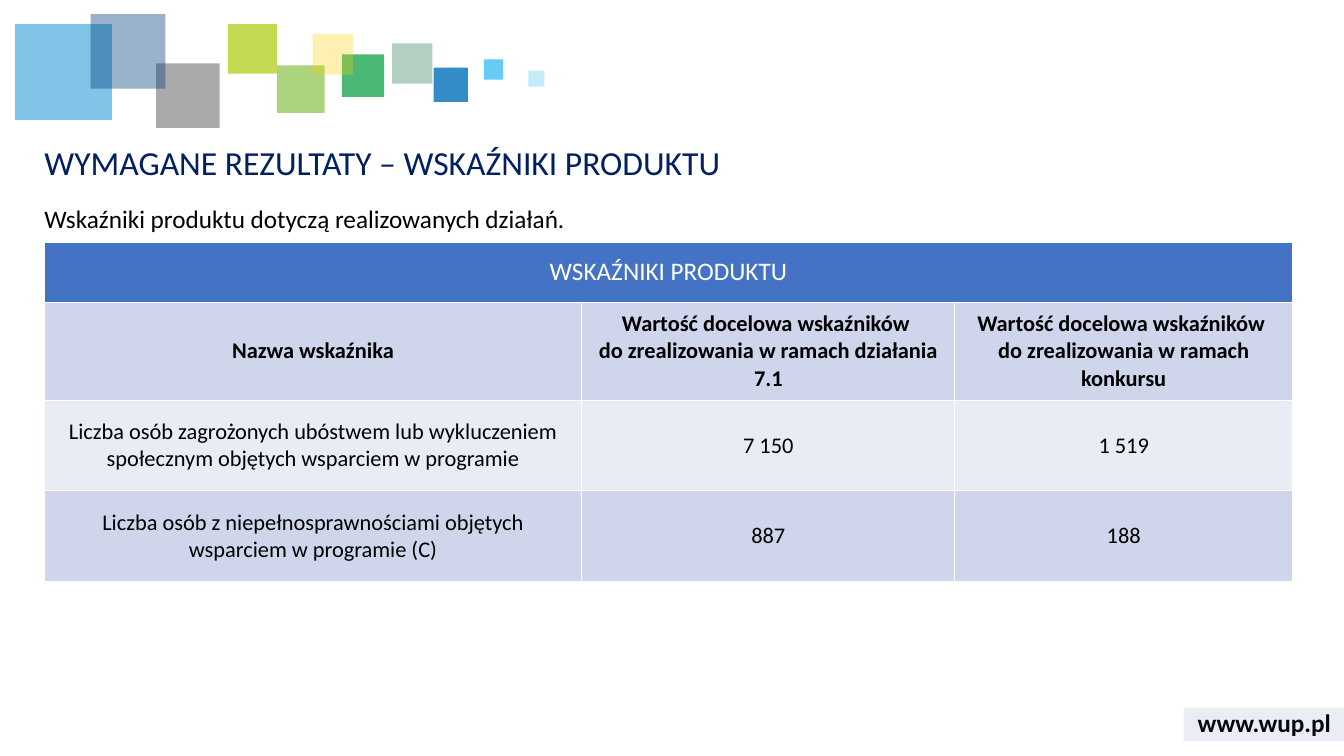
from pptx import Presentation
from pptx.dml.color import RGBColor
from pptx.enum.shapes import MSO_SHAPE
from pptx.enum.text import MSO_ANCHOR, PP_ALIGN
from pptx.oxml.ns import qn
from pptx.util import Pt
from lxml import etree

RECT = MSO_SHAPE.RECTANGLE
MIDDLE = MSO_ANCHOR.MIDDLE
LEFT, CENTER = PP_ALIGN.LEFT, PP_ALIGN.CENTER
PX = 9144


def paint(fill, color, alpha=100):
    fill.solid()
    fill.fore_color.rgb = RGBColor.from_string(color)
    if alpha < 100:
        tint = fill._xPr.find(qn("a:solidFill"))[0]
        etree.SubElement(tint, qn("a:alpha"), val=str(alpha * 1000))


def style(par, size, color, align, bold=False):
    par.alignment = align
    par.font.name = "Calibri"
    par.font.size = Pt(size)
    par.font.bold = bold
    par.font.color.rgb = RGBColor.from_string(color)


deck = Presentation()
deck.slide_width, deck.slide_height = 1333 * PX, 750 * PX
slide = deck.slides.add_slide(deck.slide_layouts[1])
shapes = slide.shapes

title, body = slide.placeholders
title.left, title.top, title.width, title.height = [n * PX for n in (34, 136, 1241, 55)]
title.text = "WYMAGANE REZULTATY – WSKAŹNIKI PRODUKTU"
title.text_frame.vertical_anchor = MIDDLE
head = title.text_frame.paragraphs[0]
head.line_spacing = 0.9
style(head, 24, "002060", LEFT)

body.left, body.top, body.width, body.height = [n * PX for n in (34, 200, 1241, 476)]
body.text = "Wskaźniki produktu dotyczą realizowanych działań."
intro = body.text_frame.paragraphs[0]
intro.line_spacing = 0.9
intro.space_before = Pt(0)
props = intro._p.get_or_add_pPr()
props.set("marL", "0")
props.set("indent", "0")
etree.SubElement(props, qn("a:buNone"))
style(intro, 18, "000000", LEFT)

site = shapes.add_textbox(1174 * PX, 697 * PX, 160 * PX, 40 * PX)
site.text_frame.word_wrap = True
site.text_frame.vertical_anchor = MIDDLE
site.text_frame.text = "www.wup.pl"
style(site.text_frame.paragraphs[0], 18, "000000", CENTER, True)

tiles = [
    (389, 43, 40, 40, "006138", 30),
    (430, 67, 34, 34, "006EB9", 80),
    (339, 54, 42, 42, "009A3C", 70),
    (15, 24, 96, 95, "028BD3", 50),
    (275, 65, 47, 47, "75B82A", 60),
    (155, 63, 63, 64, "575757", 50),
    (90, 14, 74, 74, "003D7C", 40),
    (480, 59, 19, 20, "40C0F1", 80),
    (226, 24, 49, 49, "AFCA0B", 70),
    (310, 34, 40, 40, "FED000", 30),
    (524, 70, 16, 16, "40C0F1", 30),
    (1174, 702, 160, 33, "2F5597", 10),
]
for x, y, w, h, color, alpha in tiles:
    tile = shapes.add_shape(RECT, x * PX, y * PX, w * PX, h * PX)
    tile.shadow.inherit = False
    tile.line.fill.background()
    paint(tile.fill, color, alpha)

rows = [
    ["WSKAŹNIKI PRODUKTU", "", ""],
    ["Nazwa wskaźnika",
     "Wartość docelowa wskaźników \vdo zrealizowania w ramach działania 7.1",
     "Wartość docelowa wskaźników \vdo zrealizowania w ramach konkursu"],
    ["Liczba osób zagrożonych ubóstwem lub wykluczeniem społecznym objętych wsparciem w programie",
     "7 150", "1 519"],
    ["Liczba osób z niepełnosprawnościami objętych wsparciem w programie (C)",
     "887", "188"],
]
fills = ["4472C4", "CFD5EA", "E9EBF5", "CFD5EA"]
table = shapes.add_table(4, 3, 44 * PX, 240 * PX, 1238 * PX, 337 * PX).table
for col, w in zip(table.columns, (533, 370, 335)):
    col.width = w * PX
for row, h in zip(table.rows, (60, 97, 90, 90)):
    row.height = h * PX
table.cell(0, 0).merge(table.cell(0, 2))
for r, texts in enumerate(rows):
    for c, text in enumerate(texts):
        cell = table.cell(r, c)
        paint(cell.fill, fills[r])
        cell.vertical_anchor = MIDDLE
        cell.text = text
        size, color = (18, "FFFFFF") if r == 0 else (16, "000000")
        style(cell.text_frame.paragraphs[0], size, color, CENTER, r == 1)

deck.save("out.pptx")
